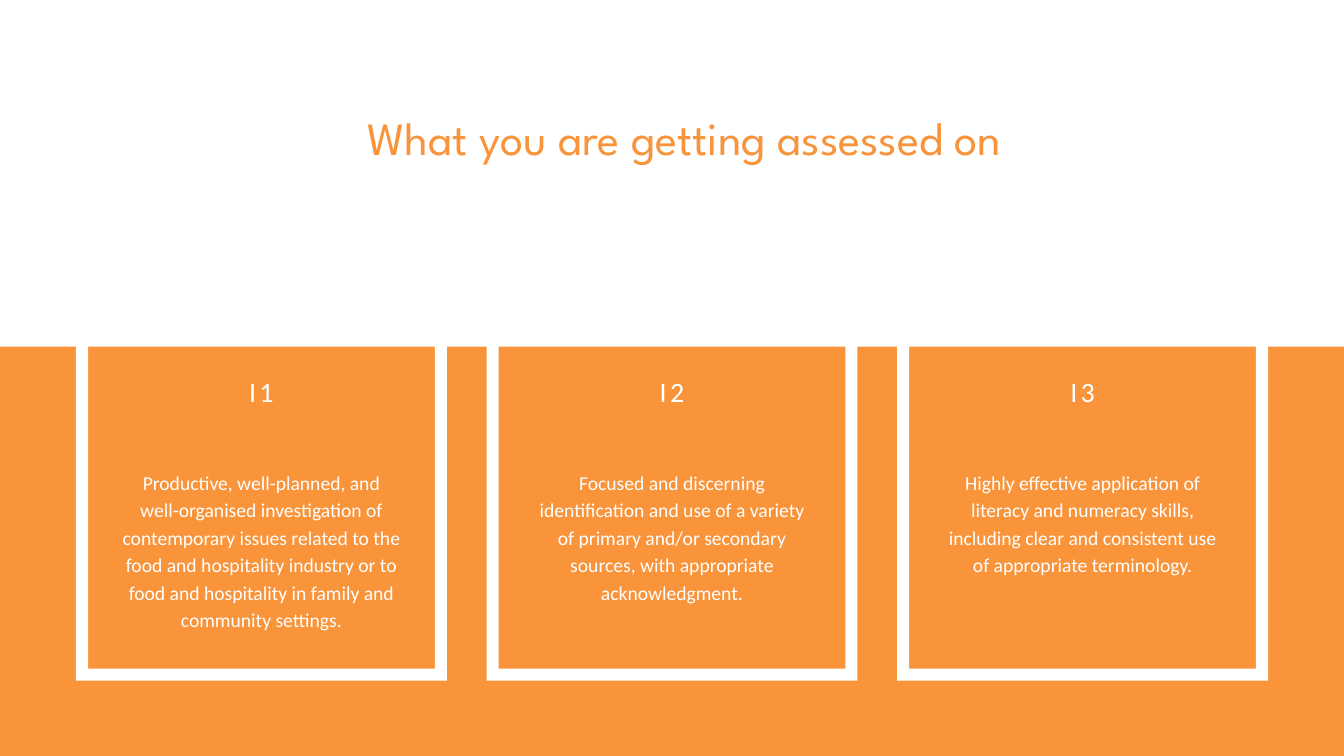
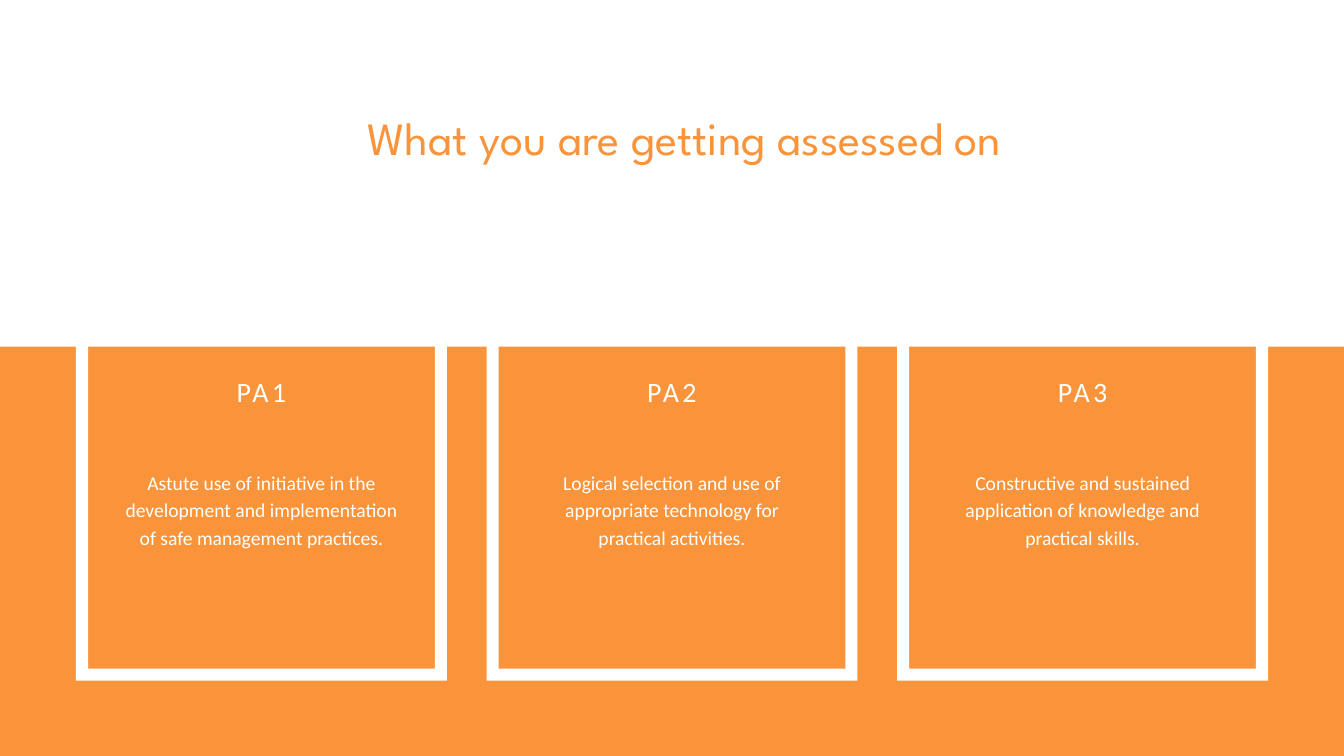
import pptx
import pptx.dml.color
import pptx.enum.shapes
import pptx.enum.text
import pptx.util

# Shared style
ORANGE = "F9943B"
WHITE = "FFFFFF"
TITLE_FONT = "League Spartan"
BODY_FONT = "Calibri"

# Grid: square cells, 20 columns across the slide
COLUMNS, ROWS = 20, 11.25
CELL = pptx.util.Inches(1)

# Three framed cards, centred as a set
CARD_COUNT = 3
CARD_WIDTH, CARD_HEIGHT, CARD_TOP = 5.52, 5.17, 4.96
CARD_GAP = 0.59
CARD_MARGIN = (COLUMNS - CARD_COUNT * CARD_WIDTH - (CARD_COUNT - 1) * CARD_GAP) / 2
FRAME = 0.18
TEXT_WIDTH = 4.17
BODY_SIZE, BODY_LEADING = 21, 29.4
BODY_LINE = 0.4

# Card heading, card text, number of lines its box holds
SLIDES = [
    [
        ("I1", "Productive, well-planned, and well-organised investigation of "
               "contemporary issues related to the food and hospitality industry "
               "or to food and hospitality in family and community settings.", 7),
        ("I2", "Focused and discerning identification and use of a variety of "
               "primary and/or secondary sources, with appropriate acknowledgment.", 6),
        ("I3", "Highly effective application of literacy and numeracy skills, "
               "including clear and consistent use of appropriate terminology.", 6),
    ],
    [
        ("PA1", "Astute use of initiative in the development and implementation "
                "of safe management practices.", 4),
        ("PA2", "Logical selection and use of appropriate technology for "
                "practical activities.", 6),
        ("PA3", "Constructive and sustained application of knowledge and "
                "practical skills.", 5),
    ],
]


def color(code):
    return pptx.dml.color.RGBColor.from_string(code)


def cells(*lengths):
    return [round(length * CELL) for length in lengths]


def write(box, text, *, size, leading, font=BODY_FONT, fill=WHITE, spacing=0):
    """Fill a box with one centred paragraph."""
    frame = box.text_frame
    frame.word_wrap = True
    frame.auto_size = pptx.enum.text.MSO_AUTO_SIZE.SHAPE_TO_FIT_TEXT
    frame.margin_left = frame.margin_right = 0
    frame.margin_top = frame.margin_bottom = 0
    para = frame.paragraphs[0]
    para.alignment = pptx.enum.text.PP_ALIGN.CENTER
    para.line_spacing = pptx.util.Pt(leading)
    span = para.add_run()
    span.text = text
    span.font.name = font
    span.font.size = pptx.util.Pt(size)
    span.font.color.rgb = color(fill)
    if spacing:
        span._r.get_or_add_rPr().set("spc", str(round(spacing * 100)))


class Deck:
    def __init__(self):
        self.file = pptx.Presentation()
        self.file.slide_width, self.file.slide_height = cells(COLUMNS, ROWS)
        self.page = None

    def new_page(self):
        self.page = self.file.slides.add_slide(self.file.slide_layouts[6])
        background = self.page.background.fill
        background.solid()
        background.fore_color.rgb = color(ORANGE)

    def paint(self, shape, fill):
        shape.shadow.inherit = False
        shape.fill.solid()
        shape.fill.fore_color.rgb = color(fill)
        shape.line.fill.background()

    def band(self, left, top, width, height):
        kind = pptx.enum.shapes.MSO_SHAPE.RECTANGLE
        shape = self.page.shapes.add_shape(kind, *cells(left, top, width, height))
        self.paint(shape, WHITE)

    def text(self, left, top, width, height, text, **style):
        box = self.page.shapes.add_textbox(*cells(left, top, width, height))
        write(box, text, **style)

    def frame(self, left, top, width, height):
        right, bottom = left + width, top + height
        outer = [(left, top), (left, bottom), (right, bottom), (right, top)]
        inner = [(right - FRAME, bottom - FRAME), (left + FRAME, bottom - FRAME),
                 (left + FRAME, top + FRAME), (right - FRAME, top + FRAME)]
        outer, inner = ([cells(*point) for point in ring] for ring in (outer, inner))
        builder = self.page.shapes.build_freeform(*outer[0])
        builder.add_line_segments(outer[1:], close=True)
        builder.move_to(*inner[0])
        builder.add_line_segments(inner[1:], close=True)
        self.paint(builder.convert_to_shape(), WHITE)

    def card(self, index, heading, body, lines):
        left = CARD_MARGIN + index * (CARD_WIDTH + CARD_GAP)
        self.frame(left, CARD_TOP, CARD_WIDTH, CARD_HEIGHT)
        text_left = left + (CARD_WIDTH - TEXT_WIDTH) / 2
        self.text(text_left, 5.66, TEXT_WIDTH, 0.47, heading,
                  size=30, leading=30, spacing=3.6)
        self.text(text_left, 6.95, TEXT_WIDTH, lines * BODY_LINE, body,
                  size=BODY_SIZE, leading=BODY_LEADING)


def main():
    deck = Deck()
    for cards in SLIDES:
        deck.new_page()
        # White band bleeding over the top and sides, with the title on it
        deck.band(-0.72, -0.67, 21.43, 5.83)
        deck.text(3.89, 1.63, 12.58, 0.82, "What you are getting assessed on",
                  size=49.5, leading=59.4, font=TITLE_FONT, fill=ORANGE)
        # Criteria cards
        for index, (heading, body, lines) in enumerate(cards):
            deck.card(index, heading, body, lines)
    deck.file.save("out.pptx")


if __name__ == "__main__":
    main()
